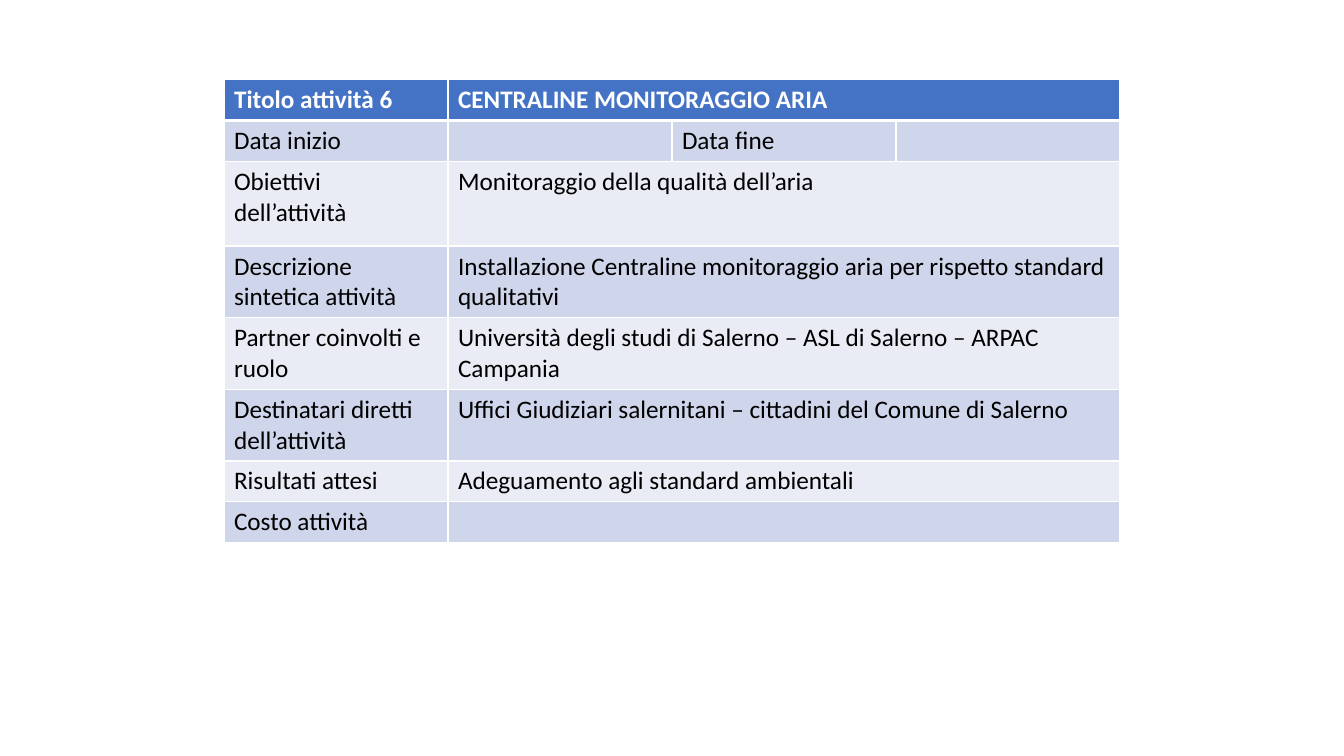
from collections import namedtuple

from lxml import etree
from pptx import Presentation
from pptx.dml.color import RGBColor
from pptx.oxml.ns import qn
from pptx.util import Pt

Box = namedtuple("Box", "left top width height")

BLANK_LAYOUT = 6
COLUMN_COUNT = 4
LINE_HEIGHT = 29.2
TALL_HEIGHT = 60.48
HEADER_FILL = "4472C4"
BAND_FILLS = ("E9EBF5", "CFD5EA")
BORDER_COLOUR = "FFFFFF"
HEADER_FORMAT = {"name": "Calibri", "size": Pt(18), "bold": True}
BODY_FORMAT = {"name": "Calibri", "size": Pt(18), "bold": False}

ACTIVITY_ROWS = (
    ("Titolo attività 6", "CENTRALINE MONITORAGGIO ARIA"),
    ("Data inizio", "", "Data fine", ""),
    ("Obiettivi dell’attività", "Monitoraggio della qualità dell’aria"),
    ("Descrizione sintetica attività",
     "Installazione Centraline monitoraggio aria per rispetto standard qualitativi"),
    ("Partner coinvolti e ruolo",
     "Università degli studi di Salerno – ASL di Salerno – ARPAC Campania"),
    ("Destinatari diretti dell’attività",
     "Uffici Giudiziari salernitani – cittadini del Comune di Salerno"),
    ("Risultati attesi", "Adeguamento agli standard ambientali"),
    ("Costo attività", ""),
)
GOALS_ROW = 2


def colour(value):
    return RGBColor.from_string(value)


def set_borders(cell, widths):
    properties = cell._tc.get_or_add_tcPr()
    for side, width in widths.items():
        line = etree.SubElement(properties, qn(f"a:ln{side}"), w=str(int(Pt(width))))
        fill = etree.SubElement(line, qn("a:solidFill"))
        etree.SubElement(fill, qn("a:srgbClr"), val=BORDER_COLOUR)


def style_cell(cell, row_index):
    is_header = row_index == 0
    set_borders(cell, {
        "L": 1,
        "R": 1,
        "T": 3 if row_index == 1 else 1,
        "B": 3 if is_header else 1,
    })
    cell.fill.solid()
    cell.fill.fore_color.rgb = colour(HEADER_FILL if is_header else BAND_FILLS[row_index % 2])


def write_cell(cell, text, is_header):
    para = cell.text_frame.paragraphs[0]
    if text:
        span = para.add_run()
        span.text = text
        font = span.font
    else:
        font = para.font
    for name, value in (HEADER_FORMAT if is_header else BODY_FORMAT).items():
        setattr(font, name, value)
    font.color.rgb = colour("FFFFFF" if is_header else "000000")


def add_activity_table(page, box):
    frame = page.shapes.add_table(
        len(ACTIVITY_ROWS), COLUMN_COUNT, *(Pt(length) for length in box))
    table = frame.table
    table.first_row = False
    table.horz_banding = False
    for column in table.columns:
        column.width = Pt(box.width / COLUMN_COUNT)
    for row_index, texts in enumerate(ACTIVITY_ROWS):
        row = table.rows[row_index]
        row.height = Pt(TALL_HEIGHT if row_index == GOALS_ROW else LINE_HEIGHT)
        for cell in row.cells:
            style_cell(cell, row_index)
        for column_index, text in enumerate(texts):
            write_cell(table.cell(row_index, column_index), text, row_index == 0)
        if len(texts) < COLUMN_COUNT:
            table.cell(row_index, 1).merge(table.cell(row_index, COLUMN_COUNT - 1))
    frame.height = Pt(box.height)


def main():
    deck = Presentation()
    deck.slide_width = Pt(960)
    deck.slide_height = Pt(540)
    page = deck.slides.add_slide(deck.slide_layouts[BLANK_LAYOUT])
    add_activity_table(page, Box(160, 56.9, 640, 328.3))
    deck.save("out.pptx")


if __name__ == "__main__":
    main()
